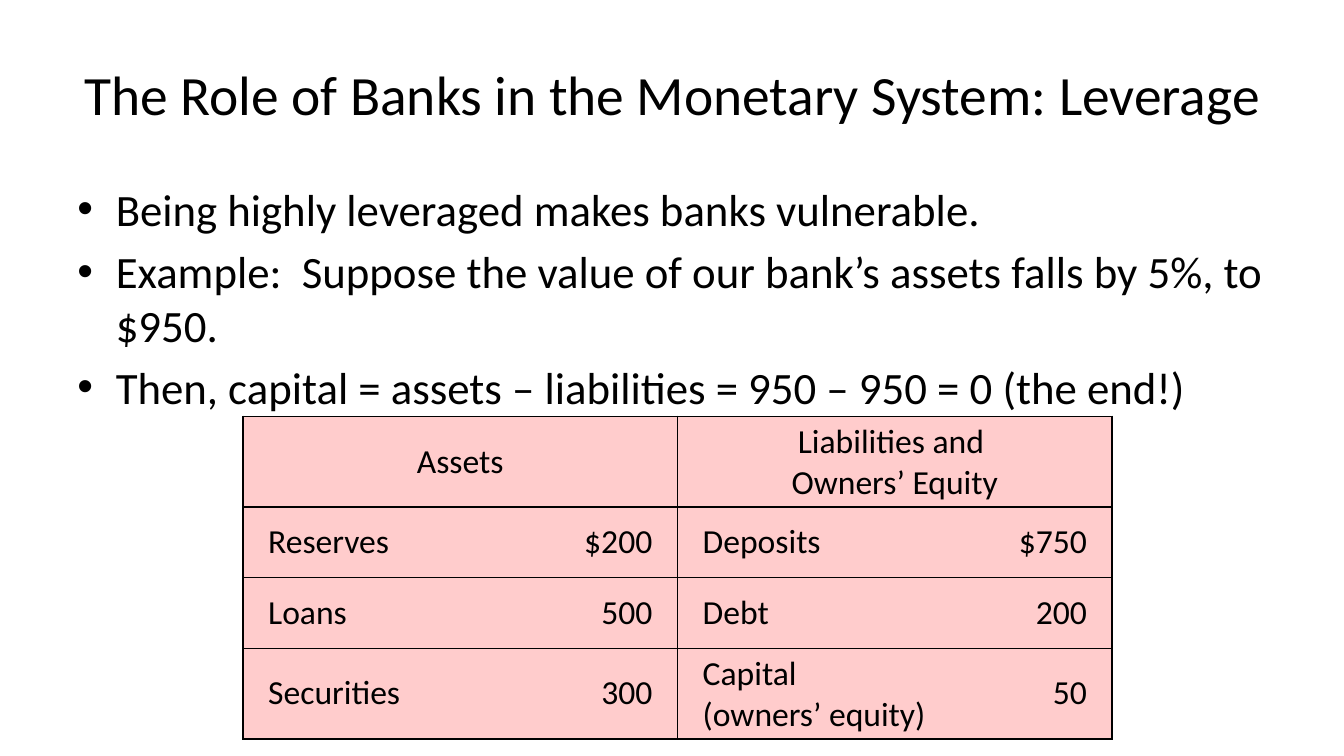
from dataclasses import dataclass

from lxml.etree import SubElement
from pptx import Presentation
from pptx.dml.color import RGBColor
from pptx.enum.text import MSO_ANCHOR as Anchor, PP_ALIGN as Align
from pptx.oxml.ns import qn
from pptx.util import Inches, Pt


@dataclass(frozen=True)
class Theme:
    font: str = "Calibri"
    ink: str = "000000"
    cell_fill: str = "FFCCCC"
    title_size: float = 39.6
    body_size: float = 32
    table_size: float = 24
    border_width: float = 1


THEME = Theme()
TITLE = "The Role of Banks in the Monetary System: Leverage"
BULLETS = [
    "Being highly leveraged makes banks vulnerable.",
    "Example:  Suppose the value of our bank’s assets falls by 5%, to $950.",
    "Then, capital = assets – liabilities = 950 – 950 = 0 (the end!)",
]
HEADINGS = ["Assets", "Liabilities and \vOwners’ Equity"]
BALANCE_SHEET = [
    ["Reserves", "$200", "Deposits", "$750"],
    ["Loans", "500", "Debt", "200"],
    ["Securities", "300", "Capital \v(owners’ equity)", "50"],
]
COLUMN_WIDTHS = [2.81, 1.5, 2.88, 1.43]
ROW_HEIGHTS = [0.9, 0.7, 0.7, 0.9]


def format_runs(paragraph, size):
    for run in paragraph.runs:
        run.font.name = THEME.font
        run.font.size = Pt(size)
        run.font.color.rgb = RGBColor.from_string(THEME.ink)


def add_text_frame(slide, left, top, width, height):
    box = slide.shapes.add_textbox(
        Inches(left), Inches(top), Inches(width), Inches(height)
    )
    box.text_frame.word_wrap = True
    return box.text_frame


def add_title(slide):
    text_frame = add_text_frame(slide, 0.67, 0.3, 12, 1.25)
    text_frame.vertical_anchor = Anchor.MIDDLE
    text_frame.text = TITLE
    paragraph = text_frame.paragraphs[0]
    paragraph.alignment = Align.CENTER
    format_runs(paragraph, THEME.title_size)


def add_bullets(slide):
    text_frame = add_text_frame(slide, 0.67, 1.75, 12, 4.95)
    text_frame.text = "\n".join(BULLETS)
    for paragraph in text_frame.paragraphs:
        paragraph.space_before = Pt(6)
        format_runs(paragraph, THEME.body_size)
        properties = paragraph._p.get_or_add_pPr()
        properties.set("marL", str(Inches(0.38)))
        properties.set("indent", str(-Inches(0.38)))
        SubElement(properties, qn("a:buFont"), typeface="Arial")
        SubElement(properties, qn("a:buChar"), char="•")


def set_borders(cell, visible_sides):
    properties = cell._tc.get_or_add_tcPr()
    for side in "LRTB":
        line = SubElement(properties, qn(f"a:ln{side}"))
        if side in visible_sides:
            line.set("w", str(Pt(THEME.border_width)))
            fill = SubElement(line, qn("a:solidFill"))
            SubElement(fill, qn("a:srgbClr"), val=THEME.ink)
        else:
            SubElement(line, qn("a:noFill"))


def style_cell(cell, text, alignment, side_margin, visible_sides):
    set_borders(cell, visible_sides)
    cell.fill.solid()
    cell.fill.fore_color.rgb = RGBColor.from_string(THEME.cell_fill)
    cell.vertical_anchor = Anchor.MIDDLE
    cell.margin_left = cell.margin_right = Inches(side_margin)
    cell.margin_top = cell.margin_bottom = Inches(0.05)
    cell.text_frame.text = text
    paragraph = cell.text_frame.paragraphs[0]
    paragraph.alignment = alignment
    format_runs(paragraph, THEME.table_size)


def add_balance_sheet(slide):
    table = slide.shapes.add_table(
        len(ROW_HEIGHTS), len(COLUMN_WIDTHS), Inches(2.41), Inches(4.13),
        Inches(sum(COLUMN_WIDTHS)), Inches(sum(ROW_HEIGHTS)),
    ).table
    table.first_row = table.horz_banding = False
    for column, width in zip(table.columns, COLUMN_WIDTHS):
        column.width = Inches(width)
    for row, height in zip(table.rows, ROW_HEIGHTS):
        row.height = Inches(height)
    for index, heading in enumerate(HEADINGS):
        first, last = table.cell(0, 2 * index), table.cell(0, 2 * index + 1)
        first.merge(last)
        style_cell(first, heading, Align.CENTER, 0.1, "LRTB")
        set_borders(last, "RTB")
    for row_index, entries in enumerate(BALANCE_SHEET, start=1):
        for column_index, entry in enumerate(entries):
            is_amount = column_index % 2 == 1
            style_cell(
                table.cell(row_index, column_index), entry,
                Align.RIGHT if is_amount else Align.LEFT, 0.25,
                "RTB" if is_amount else "LTB",
            )


def main():
    presentation = Presentation()
    presentation.slide_width = Inches(13.33)
    presentation.slide_height = Inches(7.5)
    slide = presentation.slides.add_slide(presentation.slide_layouts[6])
    add_title(slide)
    add_bullets(slide)
    add_balance_sheet(slide)
    presentation.save("out.pptx")


if __name__ == "__main__":
    main()
